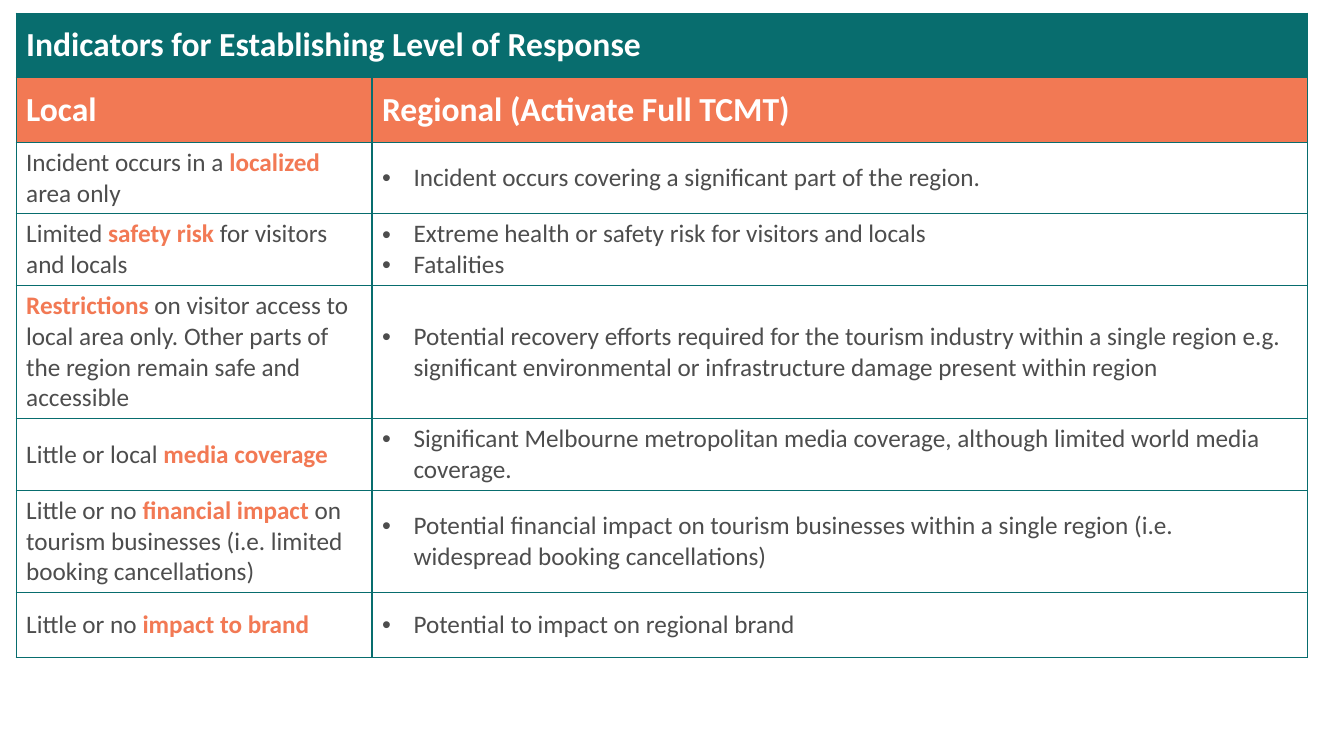
import itertools
from dataclasses import dataclass

import pptx
import pptx.dml.color
import pptx.enum.text
import pptx.oxml.ns
import pptx.util
from lxml import etree

Pt = pptx.util.Pt
qn = pptx.oxml.ns.qn


@dataclass(frozen=True)
class Theme:
    font: str = "Calibri"
    heading_size: int = 24
    body_size: int = 18
    teal: str = "086D6E"
    coral: str = "F27954"
    grey: str = "4D4D4D"
    white: str = "FFFFFF"
    border_width: int = 1
    bullet_indent: float = 22.5


THEME = Theme()
TITLE = "Indicators for Establishing Level of Response"
LEVELS = ["Local", "Regional (Activate Full TCMT)"]
# Each indicator: local wording (before, key words, after), regional bullets
INDICATORS = [
    (("Incident occurs in a ", "localized ", "area only"),
     ["Incident occurs covering a significant part of the region."]),
    (("Limited ", "safety risk ", "for visitors and locals"),
     ["Extreme health or safety risk for visitors and locals", "Fatalities"]),
    (("", "Restrictions", " on visitor access to local area only. "
      "Other parts of the region remain safe and accessible"),
     ["Potential recovery efforts required for the tourism industry within a single region "
      "e.g. significant environmental or infrastructure damage present within region"]),
    (("Little or local ", "media coverage", ""),
     ["Significant Melbourne metropolitan media coverage, "
      "although limited world media coverage."]),
    (("Little or no ", "financial impact ",
      "on tourism businesses (i.e. limited booking cancellations)"),
     ["Potential financial impact on tourism businesses within a single region "
      "(i.e. widespread booking cancellations)"]),
    (("Little or no ", "impact to brand", ""),
     ["Potential to impact on regional brand"]),
]


def rgb(value):
    return pptx.dml.color.RGBColor.from_string(value)


def style_font(font, size, color, bold):
    font.name = THEME.font
    font.size = Pt(size)
    font.bold = bold
    font.color.rgb = rgb(color)


def format_cell(cell, fill):
    """Draw the four borders, then the fill, and centre the text vertically."""
    properties = cell._tc.get_or_add_tcPr()
    for side in ("lnL", "lnR", "lnT", "lnB"):
        line = etree.SubElement(properties, qn(f"a:{side}"), w=str(Pt(THEME.border_width)))
        solid = etree.SubElement(line, qn("a:solidFill"))
        etree.SubElement(solid, qn("a:srgbClr"), val=THEME.teal)
    cell.fill.solid()
    cell.fill.fore_color.rgb = rgb(fill)
    cell.vertical_anchor = pptx.enum.text.MSO_ANCHOR.MIDDLE


def write_heading(cell, text):
    heading = cell.text_frame.paragraphs[0]
    heading.text = text
    style_font(heading.font, THEME.heading_size, THEME.white, True)


def write_local(cell, before, key_words, after):
    wording = cell.text_frame.paragraphs[0]
    style_font(wording.font, THEME.body_size, THEME.grey, False)
    for text in filter(None, (before, key_words, after)):
        run = wording.add_run()
        run.text = text
        if text == key_words:
            run.font.bold = True
            run.font.color.rgb = rgb(THEME.coral)


def write_regional(cell, points):
    cell.text_frame.text = "\n".join(points)
    for point in cell.text_frame.paragraphs:
        properties = point._p.get_or_add_pPr()
        properties.set("marL", str(Pt(THEME.bullet_indent)))
        properties.set("indent", str(-Pt(THEME.bullet_indent)))
        etree.SubElement(properties, qn("a:buFont"), typeface="Arial")
        etree.SubElement(properties, qn("a:buChar"), char="•")
        style_font(point.font, THEME.body_size, THEME.grey, False)


def add_indicator_table(slide, left, top, width, height, local_width):
    row_count = len(INDICATORS) + 2
    table = slide.shapes.add_table(
        row_count, 2, Pt(left), Pt(top), Pt(width), Pt(height)).table
    table.first_row = table.horz_banding = False
    table.columns[0].width = Pt(local_width)
    table.columns[1].width = Pt(width - local_width)
    for row in table.rows:
        row.height = Pt(height / row_count)

    fills = [THEME.teal, THEME.coral] + [THEME.white] * len(INDICATORS)
    for row, column in itertools.product(range(row_count), range(2)):
        format_cell(table.cell(row, column), fills[row])

    table.cell(0, 0).merge(table.cell(0, 1))
    write_heading(table.cell(0, 0), TITLE)
    for column, level in enumerate(LEVELS):
        write_heading(table.cell(1, column), level)
    for row, (local, regional) in enumerate(INDICATORS, start=2):
        write_local(table.cell(row, 0), *local)
        write_regional(table.cell(row, 1), regional)


def main():
    deck = pptx.Presentation()
    deck.slide_width, deck.slide_height = Pt(960), Pt(540)
    slide = deck.slides.add_slide(deck.slide_layouts[6])
    add_indicator_table(slide, left=11.5, top=9.4, width=922.3, height=368.8,
                        local_width=254.2)
    deck.save("out.pptx")


if __name__ == "__main__":
    main()
